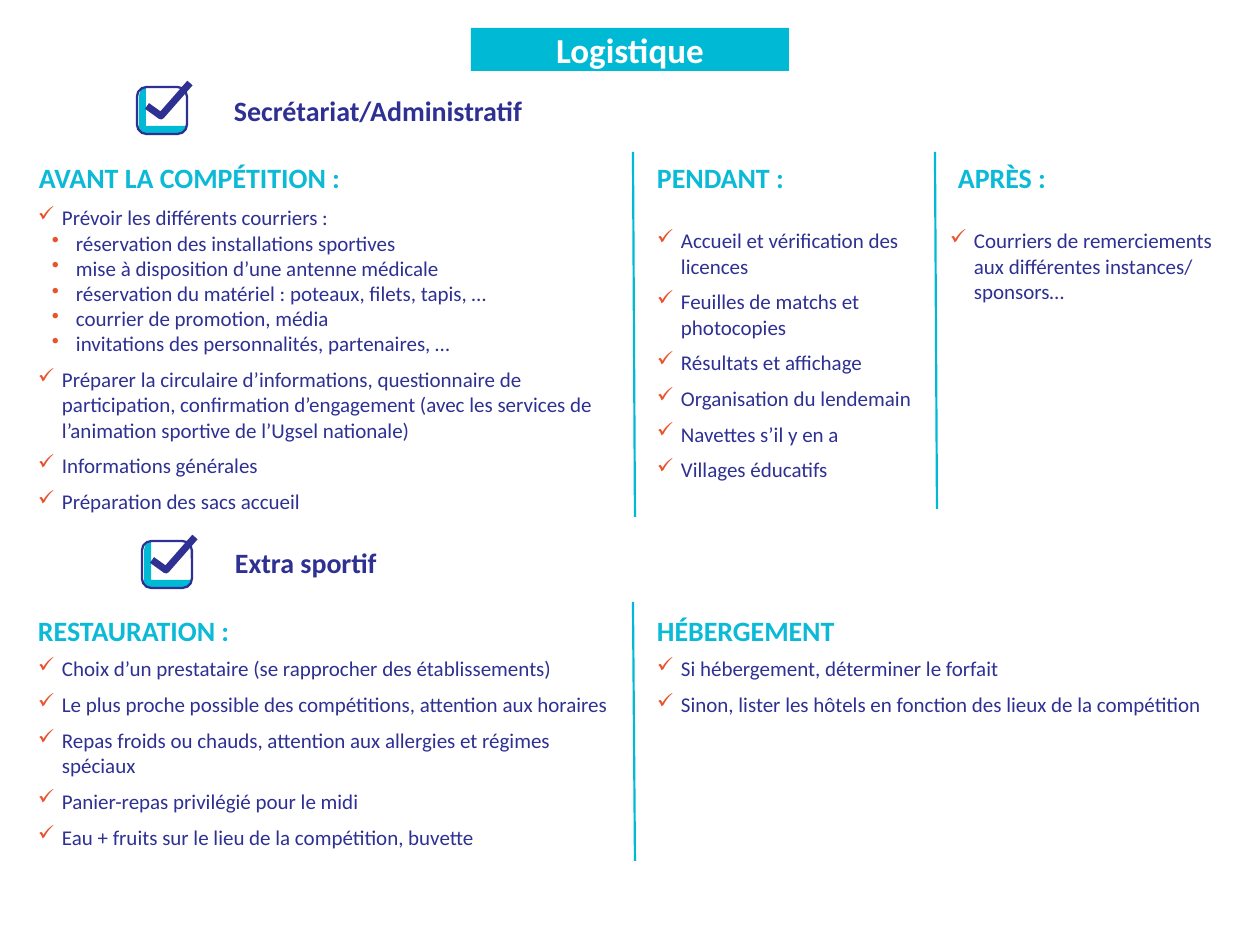
from dataclasses import dataclass

from lxml import etree
from pptx import Presentation
from pptx.dml.color import RGBColor
from pptx.enum import shapes, text
from pptx.oxml.ns import qn
from pptx.util import Pt

PX = 914400 // 126  # EMU in one px


@dataclass(frozen=True)
class Theme:
    font: str = "Calibri"
    cyan: RGBColor = RGBColor(0x00, 0xBA, 0xD5)
    heading: RGBColor = RGBColor(0x0B, 0xBA, 0xD6)
    navy: RGBColor = RGBColor(0x2E, 0x30, 0x92)
    bullet: RGBColor = RGBColor(0xE8, 0x53, 0x2B)
    white: RGBColor = RGBColor(0xFF, 0xFF, 0xFF)
    title_size: int = 20
    heading_size: int = 16
    body_size: int = 12


theme = Theme()


def write(para, words, size, color, bold=False):
    span = para.add_run()
    span.text = words
    span.font.name = theme.font
    span.font.size = Pt(size)
    span.font.bold = bold
    span.font.color.rgb = color


def prepare_frame(box):
    """Wrap the text, drop the side margins and fit the box to its text."""
    frame = box.text_frame
    frame.word_wrap = True
    frame.auto_size = text.MSO_AUTO_SIZE.SHAPE_TO_FIT_TEXT
    frame.vertical_anchor = text.MSO_ANCHOR.TOP
    frame.margin_left = frame.margin_right = frame.margin_bottom = 0
    frame.margin_top = PX
    return frame


deck = Presentation()
deck.slide_width, deck.slide_height = 1260 * PX, 945 * PX
page = deck.slides.add_slide(deck.slide_layouts[6])

# Title band
band = page.shapes.add_shape(
    shapes.MSO_SHAPE.RECTANGLE, 471 * PX, 28 * PX, 318 * PX, 43 * PX)
band.shadow.inherit = False
band.fill.solid()
band.fill.fore_color.rgb = theme.cyan
band.line.fill.background()
para = prepare_frame(band).paragraphs[0]
para.alignment = text.PP_ALIGN.CENTER
write(para, "Logistique", theme.title_size, theme.white, bold=True)

# Section titles and column headings: words, left, top, width, colour
LEFT, MIDDLE, RIGHT = 38, 657, 958
headings = [
    ("Secrétariat/Administratif", 234, 93, 372, theme.navy),
    ("Extra sportif", 235, 545, 306, theme.navy),
    ("AVANT LA COMPÉTITION :", LEFT + 1, 160, 344, theme.heading),
    ("PENDANT :", MIDDLE, 160, 149, theme.heading),
    ("APRÈS :", RIGHT, 160, 149, theme.heading),
    ("RESTAURATION :", LEFT, 613, 489, theme.heading),
    ("HÉBERGEMENT", MIDDLE, 613, 567, theme.heading),
]
for words, left, top, width, color in headings:
    box = page.shapes.add_textbox(left * PX, top * PX, width * PX, 35 * PX)
    para = prepare_frame(box).paragraphs[0]
    if color == theme.heading:
        para.line_spacing = Pt(19.1)
    write(para, words, theme.heading_size, color, bold=True)

# Checkbox icons, drawn in px from their own corner
CORNER_FILL = [(9, 5), (7, 5), (5, 6), (3, 9), (2, 13), (2, 44), (2, 47),
               (3, 48), (5, 49), (8, 50), (44, 50), (48, 47), (49, 45),
               (49, 43), (9, 43)]
TICK = [(10, 23), (24, 33), (53, 0)]

for left, top in [(137, 83), (142, 537)]:
    icon = page.shapes.add_group_shape()

    builder = icon.shapes.build_freeform(*CORNER_FILL[0], scale=PX)
    builder.add_line_segments(CORNER_FILL[1:], close=True)
    corner = builder.convert_to_shape(left * PX, top * PX)
    corner.fill.solid()
    corner.fill.fore_color.rgb = theme.cyan
    corner.line.fill.background()

    frame = icon.shapes.add_shape(
        shapes.MSO_SHAPE.ROUNDED_RECTANGLE,
        left * PX, (top + 4) * PX, 50 * PX, 47 * PX)
    frame.adjustments[0] = 0.2

    builder = icon.shapes.build_freeform(*TICK[0], scale=PX)
    builder.add_line_segments(TICK[1:], close=False)
    tick = builder.convert_to_shape(left * PX, top * PX)

    for outline, weight in [(frame, 1.3), (tick, 4)]:
        outline.fill.background()
        outline.line.color.rgb = theme.navy
        outline.line.width = Pt(weight)
    for part in (corner, frame, tick):
        part.shadow.inherit = False

# Column dividers: from x, y to x, y
for ends in [(633, 152, 635, 517), (935, 152, 937, 509), (633, 602, 635, 861)]:
    divider = page.shapes.add_connector(
        shapes.MSO_CONNECTOR.STRAIGHT, *(end * PX for end in ends))
    divider.line.color.rgb = theme.cyan
    divider.line.width = Pt(1.25)
    etree.SubElement(divider.element.spPr, qn("a:effectLst"))

# Checklists: left, top, width, height, items as (bullet, words)
CHECK, DOT = "✓", "•"
checklists = [
    (37, 204, 583, 314, [
        (CHECK, "Prévoir les différents courriers :"),
        (DOT, "réservation des installations sportives"),
        (DOT, "mise à disposition d’une antenne médicale"),
        (DOT, "réservation du matériel : poteaux, filets, tapis, …"),
        (DOT, "courrier de promotion, média"),
        (DOT, "invitations des personnalités, partenaires, …"),
        (CHECK, "Préparer la circulaire d’informations, questionnaire de "
                "participation, confirmation d’engagement (avec les services "
                "de l’animation sportive de l’Ugsel nationale)"),
        (CHECK, "Informations générales"),
        (CHECK, "Préparation des sacs accueil"),
    ]),
    (656, 227, 267, 243, [
        (CHECK, "Accueil et vérification des licences"),
        (CHECK, "Feuilles de matchs et photocopies"),
        (CHECK, "Résultats et affichage"),
        (CHECK, "Organisation du lendemain"),
        (CHECK, "Navettes s’il y en a"),
        (CHECK, "Villages éducatifs"),
    ]),
    (949, 227, 267, 78, [
        (CHECK, "Courriers de remerciements aux différentes instances/ "
                "sponsors…"),
    ]),
    (37, 655, 583, 197, [
        (CHECK, "Choix d’un prestataire (se rapprocher des établissements)"),
        (CHECK, "Le plus proche possible des compétitions, attention aux "
                "horaires"),
        (CHECK, "Repas froids ou chauds, attention aux allergies et régimes "
                "spéciaux"),
        (CHECK, "Panier-repas privilégié pour le midi"),
        (CHECK, "Eau + fruits sur le lieu de la compétition, buvette"),
    ]),
    (656, 655, 583, 63, [
        (CHECK, "Si hébergement, déterminer le forfait"),
        (CHECK, "Sinon, lister les hôtels en fonction des lieux de la "
                "compétition"),
    ]),
]
INDENT = {CHECK: 25, DOT: 39}
HANGING = 24

for left, top, width, height, items in checklists:
    box = page.shapes.add_textbox(left * PX, top * PX, width * PX, height * PX)
    frame = prepare_frame(box)
    for index, (mark, words) in enumerate(items):
        para = frame.add_paragraph() if index else frame.paragraphs[0]
        props = para._p.get_or_add_pPr()
        props.set("marL", str(INDENT[mark] * PX))
        props.set("indent", str(-HANGING * PX))
        tint = etree.SubElement(props, qn("a:buClr"))
        etree.SubElement(tint, qn("a:srgbClr"), val=str(theme.bullet))
        etree.SubElement(props, qn("a:buChar"), char=mark)
        if index and mark == CHECK:
            para.space_before = Pt(6)
        write(para, words, theme.body_size, theme.navy)

deck.save("out.pptx")
